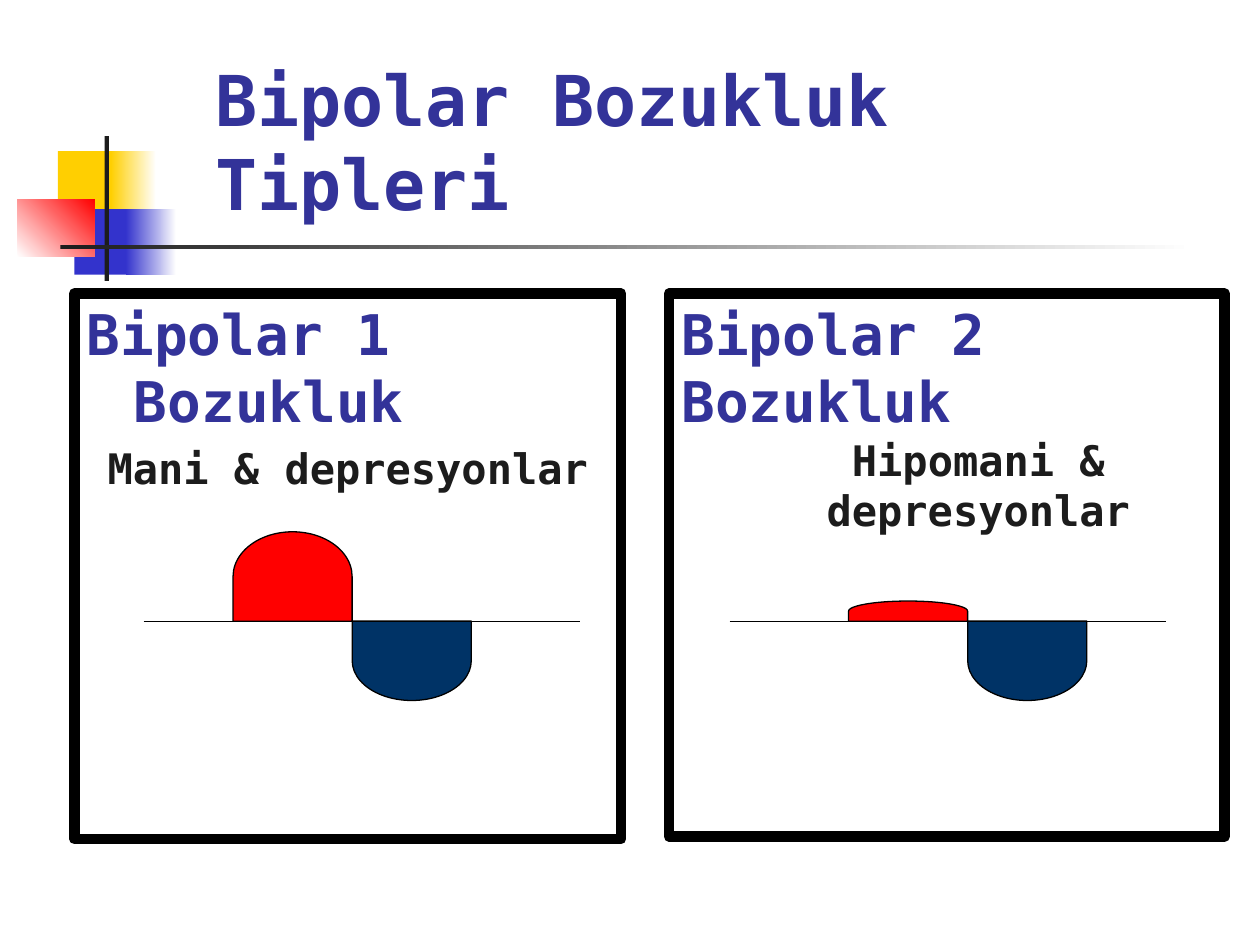
from pptx import Presentation
from pptx.dml.color import RGBColor
from pptx.enum.shapes import MSO_CONNECTOR as Conn, MSO_SHAPE as Shape
from pptx.enum.text import MSO_ANCHOR as Anchor, PP_ALIGN as Align
from pptx.oxml.ns import qn
from pptx.util import Inches, Pt
from lxml.etree import SubElement

COLS, ROWS = 100, 75
WIDTH, HEIGHT = Inches(10), Inches(7.5)
FONT = "DejaVu Sans Mono"
INDIGO, INK, BLACK, WHITE = "333399", "1C1C1C", "000000", "FFFFFF"
YELLOW, BLUE, RED, NAVY = "FFCF01", "3333CC", "FF0000", "003366"


def color(value):
    return RGBColor.from_string(value)


def col(n):
    return round(WIDTH * n / COLS)


def row(n):
    return round(HEIGHT * n / ROWS)


def grid(x, y, w, h):
    return col(x), row(y), col(w), row(h)


def add_box(s, box, fill=None, line=None, weight=0.75, kind=Shape.RECTANGLE):
    sp = s.shapes.add_shape(kind, *grid(*box))
    sp.shadow.inherit = False
    if fill:
        sp.fill.solid()
        sp.fill.fore_color.rgb = color(fill)
    else:
        sp.fill.background()
    if line:
        sp.line.color.rgb = color(line)
        sp.line.width = Pt(weight)
    else:
        sp.line.fill.background()
    return sp


def add_fade(s, box, start, end, angle=0):
    fill = add_box(s, box).fill
    fill.gradient()
    fill.gradient_angle = angle
    for stop, value in zip(fill.gradient_stops, (start, end)):
        stop.color.rgb = color(value)


def add_run(p, text, size, value):
    r = p.add_run()
    r.text = text
    r.font.name = FONT
    r.font.size = Pt(size)
    r.font.bold = True
    r.font.color.rgb = color(value)


def set_indent(p, left, first=0):
    pPr = p._p.get_or_add_pPr()
    pPr.set("marL", str(col(left)))
    pPr.set("indent", str(col(first)))


def draw_ornament(s, box):
    x, y, w, h = box
    add_box(s, (x + 3.2, y + 1.2, 4.8, 5.2), YELLOW)
    add_fade(s, (x + 7.4, y + 1.2, 3.6, 5.2), YELLOW, WHITE)
    add_box(s, (x + 4.5, y + 5.8, 4.6, 5.2), BLUE)
    add_fade(s, (x + 8.6, y + 5.8, 4, 5.2), BLUE, WHITE)
    add_fade(s, (x, y + 5, 6.1, 4.6), WHITE, RED, 45)
    add_box(s, (x + 6.9, y, 0.35, h), INK)
    add_fade(s, (x + 3.4, y + 8.65, w - 3.4, 0.35), INK, WHITE)


def draw_title(s, box, text):
    tf = s.shapes.add_textbox(*grid(*box)).text_frame
    tf.word_wrap = True
    tf.vertical_anchor = Anchor.BOTTOM
    add_run(tf.paragraphs[0], text, 40, INDIGO)


def draw_panel(s, box, heading, detail, heading_indent, detail_indent, gap):
    tf = add_box(s, box, line=BLACK, weight=6).text_frame
    tf.word_wrap = True
    tf.vertical_anchor = Anchor.TOP
    p = tf.paragraphs[0]
    p.alignment = Align.LEFT
    set_indent(p, *heading_indent)
    add_run(p, heading, 32, INDIGO)
    p = tf.add_paragraph()
    p.alignment = Align.CENTER
    p.space_before = Pt(gap)
    set_indent(p, *detail_indent)
    add_run(p, detail, 24, INK)


def draw_axis(s, x, y, w):
    line = s.shapes.add_connector(Conn.STRAIGHT, col(x), row(y), col(x + w), row(y))
    line.line.color.rgb = color(BLACK)
    line.line.width = Pt(0.75)
    SubElement(line._element.spPr, qn("a:effectLst"))


def draw_hump(s, box, fill, rotation):
    x, y, w, h = box
    turned = (x + (w - h) / 2, y + (h - w) / 2, h, w)
    sp = add_box(s, turned, fill, BLACK, kind=Shape.FLOWCHART_DELAY)
    sp.rotation = rotation


def draw_mood_curve(s, box, start, high):
    x, y, w, low = box
    hump = 9.45
    draw_axis(s, x, y, w)
    draw_hump(s, (x + start, y - high, hump, high), RED, 270)
    draw_hump(s, (x + start + hump, y, hump, low), NAVY, 90)


def main():
    prs = Presentation()
    prs.slide_width, prs.slide_height = WIDTH, HEIGHT
    s = prs.slides.add_slide(prs.slide_layouts[6])
    draw_ornament(s, (1.4, 10.8, 93.4, 11.5))
    draw_title(s, (16.1, 2.3, 81.7, 16), "Bipolar Bozukluk Tipleri")
    hanging = (3.75, -3.75)
    draw_panel(s, (5.9, 23.3, 43.4, 43.3), "Bipolar 1 Bozukluk",
               "Mani & depresyonlar", hanging, hanging, 4.8)
    draw_panel(s, (53.1, 23.3, 44.1, 43.1), "Bipolar 2 Bozukluk",
               "Hipomani & depresyonlar", (0, 0), (5, 0), 0)
    draw_mood_curve(s, (11.4, 49.3, 34.65, 6.3), 7.1, 7.1)
    draw_mood_curve(s, (57.9, 49.3, 34.65, 6.3), 9.45, 1.6)
    prs.save("out.pptx")


if __name__ == "__main__":
    main()
